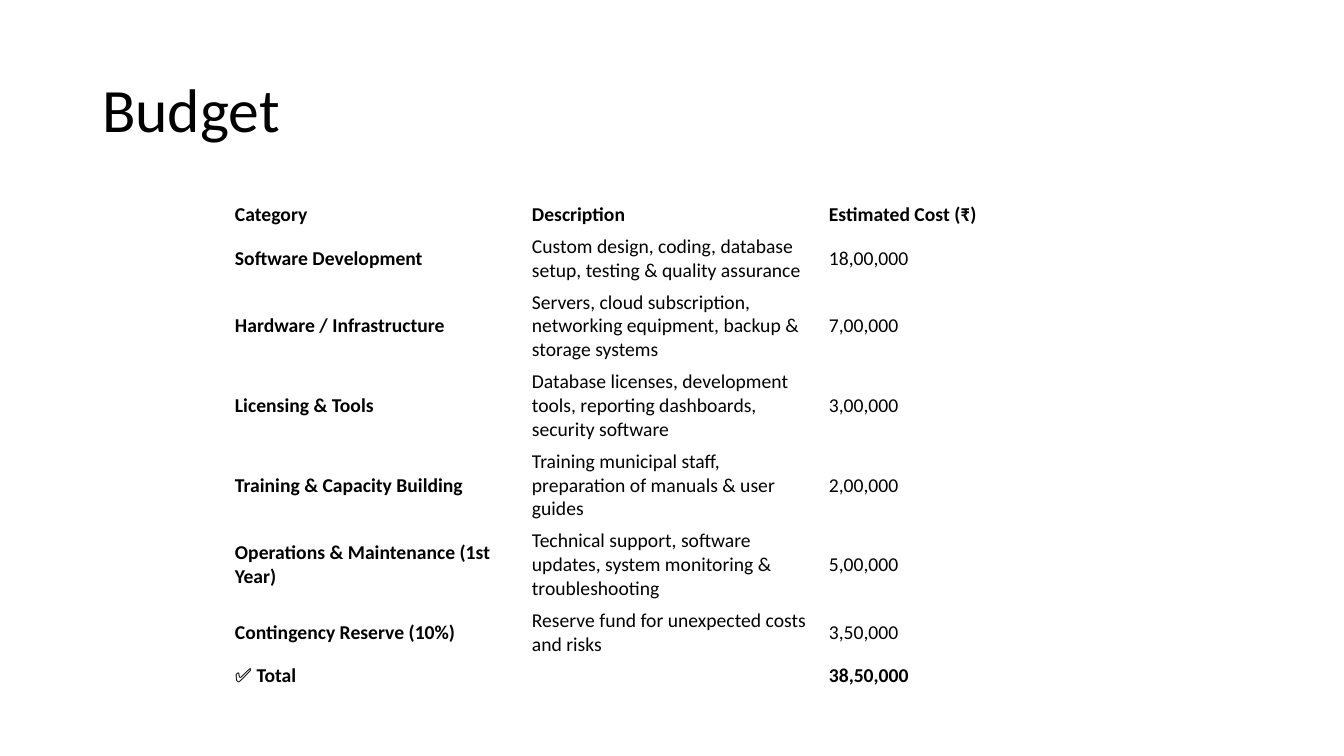
from lxml import etree
from pptx import Presentation, util as u
from pptx.dml.color import RGBColor
from pptx.enum import text
from pptx.oxml.ns import qn

PX = 914400 / 100.8
BLACK = RGBColor(0, 0, 0)
FONT = "Calibri"
BODY_SIZE = u.Pt(14)


def px(length):
    return u.Emu(round(length * PX))


def format_text(paragraph, size, bold):
    for run in paragraph.runs:
        run.font.name = FONT
        run.font.size = size
        run.font.bold = bold
        run.font.color.rgb = BLACK


presentation = Presentation()
presentation.slide_width = px(1344)
presentation.slide_height = px(756)
slide = presentation.slides.add_slide(presentation.slide_layouts[5])

title = slide.shapes.title
title.left, title.top, title.width, title.height = px(92), px(40), px(1159), px(146)
title.text_frame.text = "Budget"
title.text_frame.vertical_anchor = text.MSO_ANCHOR.MIDDLE
heading = title.text_frame.paragraphs[0]
heading.alignment = text.PP_ALIGN.LEFT
heading.line_spacing = 0.9
format_text(heading, u.Pt(44), False)

budget = [
    ("Category", "Description", "Estimated Cost (₹)"),
    ("Software Development",
     "Custom design, coding, database setup, testing & quality assurance", "18,00,000"),
    ("Hardware / Infrastructure",
     "Servers, cloud subscription, networking equipment, backup & storage systems", "7,00,000"),
    ("Licensing & Tools",
     "Database licenses, development tools, reporting dashboards, security software", "3,00,000"),
    ("Training & Capacity Building",
     "Training municipal staff, preparation of manuals & user guides", "2,00,000"),
    ("Operations & Maintenance (1st Year)",
     "Technical support, software updates, system monitoring & troubleshooting", "5,00,000"),
    ("Contingency Reserve (10%)", "Reserve fund for unexpected costs and risks", "3,50,000"),
    ("✅ Total", "", "38,50,000"),
]
row_heights = [31, 54, 78, 78, 78, 78, 54, 31]
column_width = 297

table = slide.shapes.add_table(
    len(budget), 3, px(227), px(199), px(3 * column_width), px(sum(row_heights))).table
table.first_row = False
table.horz_banding = False
for column in table.columns:
    column.width = px(column_width)

last_row = len(budget) - 1
for row_index, (height, entries) in enumerate(zip(row_heights, budget)):
    table.rows[row_index].height = px(height)
    for column_index, entry in enumerate(entries):
        cell = table.cell(row_index, column_index)
        cell.fill.background()
        cell.vertical_anchor = text.MSO_ANCHOR.MIDDLE
        cell.margin_left = cell.margin_right = px(8)
        cell.margin_top = cell.margin_bottom = px(4)
        paragraph = cell.text_frame.paragraphs[0]
        if entry:
            paragraph.text = entry
            format_text(paragraph, BODY_SIZE, column_index == 0 or row_index in (0, last_row))
        else:
            # An empty cell keeps the body size, so its row does not grow
            etree.SubElement(paragraph._p, qn("a:endParaRPr"), sz=str(BODY_SIZE.centipoints))

presentation.save("out.pptx")
